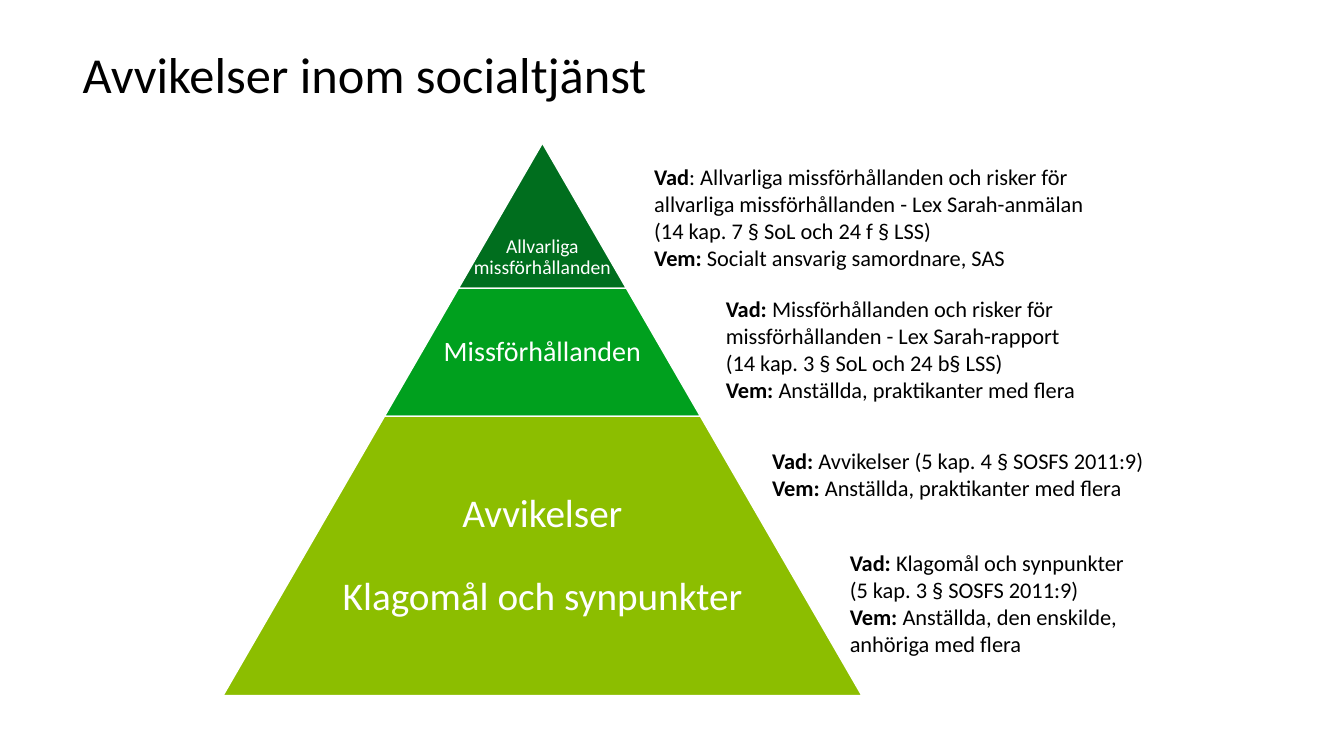
from dataclasses import dataclass

import pptx
import pptx.dml.color
import pptx.enum.shapes
import pptx.enum.text
import pptx.util

Inches = pptx.util.Inches
Pt = pptx.util.Pt
Anchor = pptx.enum.text.MSO_ANCHOR
Align = pptx.enum.text.PP_ALIGN
AutoSize = pptx.enum.text.MSO_AUTO_SIZE


@dataclass(frozen=True)
class Theme:
    font: str = "Calibri"
    ink: str = "000000"
    paper: str = "FFFFFF"
    title_size: int = 36
    note_size: int = 16
    outline: float = 1


@dataclass(frozen=True)
class Tier:
    lines: tuple[str, ...]
    height: float
    color: str
    size: int
    text_width: float
    gap: float = 0
    bottom_inset: float = 0.03
    anchor: Anchor = Anchor.MIDDLE


@dataclass(frozen=True)
class Note:
    left: float
    top: float
    width: float
    height: float
    what: tuple[str, ...]
    who: str
    what_label: str = "Vad: "


THEME = Theme()
APEX_X, APEX_Y = 5.38, 1.42
SLOPE = 0.578

TIERS = (
    Tier(("Allvarliga", "missförhållanden"), 1.44, "006E1E", 14, 1.66,
         bottom_inset=0.09, anchor=Anchor.BOTTOM),
    Tier(("Missförhållanden",), 1.27, "00A01E", 20, 2.04),
    Tier(("Avvikelser", "Klagomål och synpunkter"), 2.77, "8CBE00", 28, 4.12, gap=29),
)

NOTES = (
    Note(6.39, 1.57, 4.98, 1.18,
         (": Allvarliga missförhållanden och risker för allvarliga "
          "missförhållanden - Lex Sarah-anmälan",
          "(14 kap. 7 § SoL och 24 f § LSS)"),
         "Socialt ansvarig samordnare, SAS", "Vad"),
    Note(7.1, 2.88, 4.38, 1.18,
         ("Missförhållanden och risker för missförhållanden - Lex Sarah-rapport",
          "(14 kap. 3 § SoL och 24 b§ LSS)"),
         "Anställda, praktikanter med flera"),
    Note(7.56, 4.39, 3.92, 0.64,
         ("Avvikelser (5 kap. 4 § SOSFS 2011:9)",),
         "Anställda, praktikanter med flera"),
    Note(8.33, 5.4, 3.58, 1.18,
         ("Klagomål och synpunkter", "(5 kap. 3 § SOSFS 2011:9)"),
         "Anställda, den enskilde, anhöriga med flera"),
)


def rgb(color: str) -> pptx.dml.color.RGBColor:
    return pptx.dml.color.RGBColor.from_string(color)


def set_font(paragraph, size: float, color: str) -> None:
    paragraph.font.name = THEME.font
    paragraph.font.size = Pt(size)
    paragraph.font.color.rgb = rgb(color)


def add_title(slide, text: str) -> None:
    title = slide.shapes.title
    title.left, title.top = Inches(0.72), Inches(0.42)
    title.width, title.height = Inches(11.69), Inches(0.62)
    frame = title.text_frame
    frame.text = text
    frame.auto_size = AutoSize.NONE
    frame.vertical_anchor = Anchor.MIDDLE
    paragraph = frame.paragraphs[0]
    paragraph.alignment = Align.LEFT
    set_font(paragraph, THEME.title_size, THEME.ink)


def add_tier(slide, tier: Tier, depth: float) -> None:
    width = 2 * SLOPE * (depth + tier.height)
    top = Inches(APEX_Y + depth)
    height = Inches(tier.height)
    shape = slide.shapes.add_shape(
        pptx.enum.shapes.MSO_SHAPE.TRAPEZOID,
        Inches(APEX_X - width / 2), top, Inches(width), height)
    shape.adjustments[0] = SLOPE
    shape.shadow.inherit = False
    shape.fill.solid()
    shape.fill.fore_color.rgb = rgb(tier.color)
    shape.line.color.rgb = rgb(THEME.paper)
    shape.line.width = Pt(THEME.outline)

    label = slide.shapes.add_textbox(
        Inches(APEX_X - tier.text_width / 2), top, Inches(tier.text_width), height)
    frame = label.text_frame
    frame.word_wrap = True
    frame.vertical_anchor = tier.anchor
    frame.margin_left = frame.margin_right = frame.margin_top = Inches(0.03)
    frame.margin_bottom = Inches(tier.bottom_inset)
    for index, line in enumerate(tier.lines):
        paragraph = frame.add_paragraph() if index else frame.paragraphs[0]
        paragraph.text = line
        paragraph.alignment = Align.CENTER
        paragraph.line_spacing = 0.9
        if index:
            paragraph.space_before = Pt(tier.gap)
        set_font(paragraph, tier.size, THEME.paper)


def fill_note_paragraph(paragraph, label: str, lines: tuple[str, ...]) -> None:
    set_font(paragraph, THEME.note_size, THEME.ink)
    heading = paragraph.add_run()
    heading.text = label
    heading.font.bold = True
    for index, line in enumerate(lines):
        if index:
            paragraph.add_line_break()
        paragraph.add_run().text = line


def add_note(slide, note: Note) -> None:
    box = slide.shapes.add_textbox(
        Inches(note.left), Inches(note.top), Inches(note.width), Inches(note.height))
    frame = box.text_frame
    frame.word_wrap = True
    frame.auto_size = AutoSize.SHAPE_TO_FIT_TEXT
    fill_note_paragraph(frame.paragraphs[0], note.what_label, note.what)
    fill_note_paragraph(frame.add_paragraph(), "Vem: ", (note.who,))


def main() -> None:
    presentation = pptx.Presentation()
    presentation.slide_width = Inches(13.33)
    presentation.slide_height = Inches(7.5)
    slide = presentation.slides.add_slide(presentation.slide_layouts[5])
    add_title(slide, "Avvikelser inom socialtjänst")
    depth = 0.0
    for tier in TIERS:
        add_tier(slide, tier, depth)
        depth += tier.height
    for note in NOTES:
        add_note(slide, note)
    presentation.save("out.pptx")


if __name__ == "__main__":
    main()
